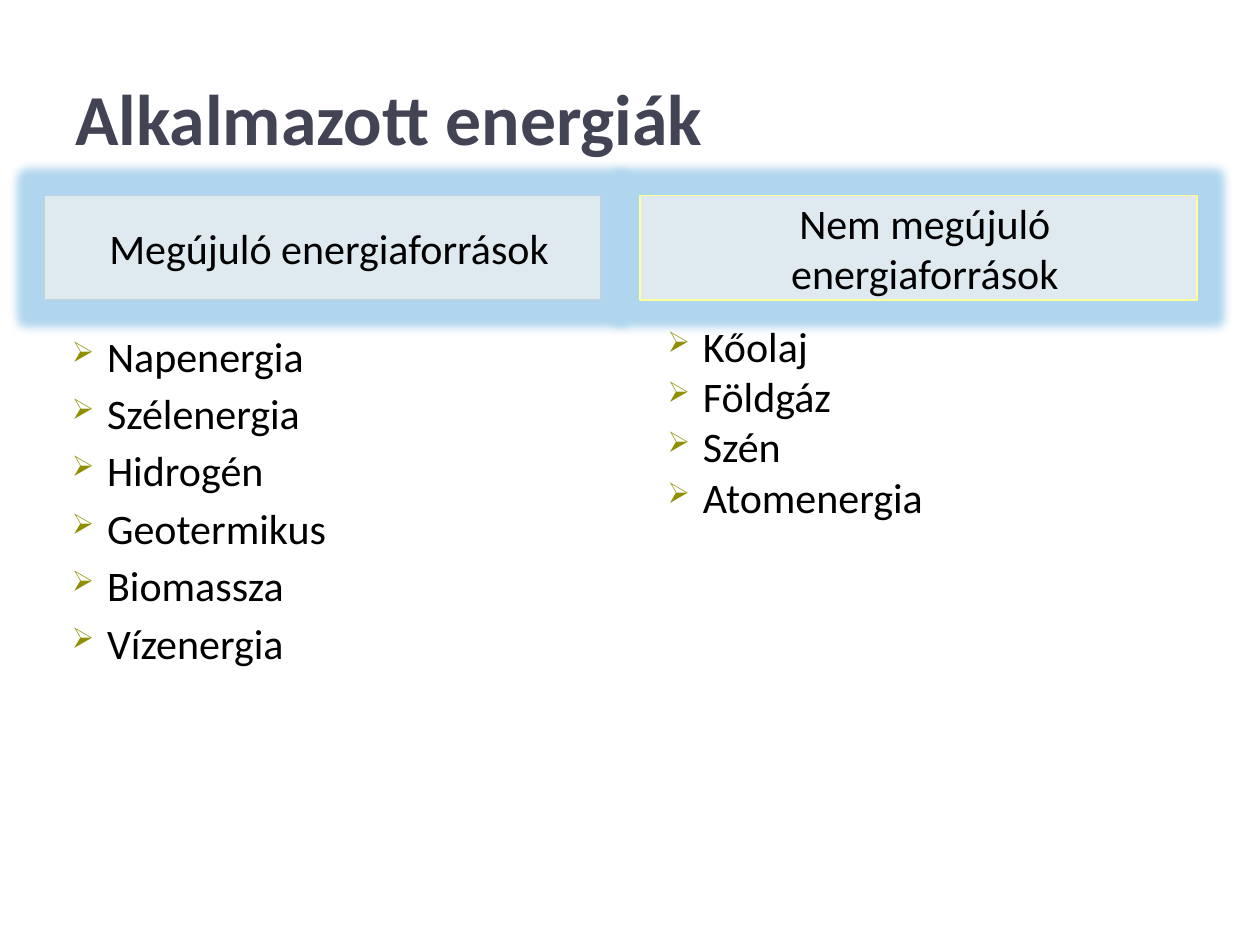
import pptx
import pptx.dml.color
import pptx.enum.shapes
import pptx.enum.text
import pptx.oxml.ns
import pptx.util
from lxml import etree
from pptx.util import Cm

ALIGN = pptx.enum.text.PP_ALIGN
MIDDLE = pptx.enum.text.MSO_ANCHOR.MIDDLE


def color(value):
    return pptx.dml.color.RGBColor.from_string(value)


def add_element(parent, tag, **attributes):
    return etree.SubElement(parent, pptx.oxml.ns.qn(tag), attributes)


def add_bullet(paragraph):
    properties = paragraph._p.get_or_add_pPr()
    properties.set("marL", str(Cm(1.02)))
    properties.set("indent", str(Cm(-0.71)))
    bullet_color = add_element(properties, "a:buClr")
    add_element(bullet_color, "a:srgbClr", val="8F8F00")
    add_element(properties, "a:buSzPct", val="68000")
    add_element(properties, "a:buChar", char="➢")


def write_text(frame, lines, size=24, text_color="000000", bold=False,
               align=ALIGN.LEFT, gap=0, bulleted=False):
    frame.word_wrap = True
    for index, line in enumerate(lines):
        paragraph = frame.add_paragraph() if index else frame.paragraphs[0]
        if bulleted:
            add_bullet(paragraph)
        paragraph.alignment = align
        paragraph.space_before = pptx.util.Pt(gap if index else 0)
        run = paragraph.add_run()
        run.text = line
        run.font.name = "Calibri"
        run.font.size = pptx.util.Pt(size)
        run.font.bold = bold
        run.font.color.rgb = color(text_color)


def add_glow(shape, glow_color, radius):
    shape.shadow.inherit = False
    effects = shape._element.spPr.find(pptx.oxml.ns.qn("a:effectLst"))
    glow = add_element(effects, "a:glow", rad=str(pptx.util.Pt(radius)))
    add_element(glow, "a:srgbClr", val=glow_color)


def add_title(slide, left, top, width, height, text):
    title = slide.shapes.add_textbox(left, top, width, height)
    title.text_frame.vertical_anchor = MIDDLE
    write_text(title.text_frame, [text], size=41, text_color="424456", bold=True)


def add_heading(slide, left, top, width, height, text, line_color):
    heading = slide.shapes.add_shape(
        pptx.enum.shapes.MSO_SHAPE.RECTANGLE, left, top, width, height)
    heading.fill.solid()
    heading.fill.fore_color.rgb = color("DEE9F0")
    heading.line.color.rgb = color(line_color)
    heading.line.width = pptx.util.Pt(0.75)
    add_glow(heading, "B0D6EF", 10)
    frame = heading.text_frame
    frame.margin_left = Cm(0.51)
    frame.vertical_anchor = MIDDLE
    write_text(frame, [text], align=ALIGN.CENTER)


def add_energy_column(slide, left, top, width, heading, items, line_color,
                      list_offset, gap):
    add_heading(slide, left, top, width, Cm(2.11), heading, line_color)
    energy_list = slide.shapes.add_textbox(
        left, top + list_offset, width, Cm(10.95))
    write_text(energy_list.text_frame, items, gap=gap, bulleted=True)


def main():
    presentation = pptx.Presentation()
    presentation.slide_width = Cm(25.4)
    presentation.slide_height = Cm(19.05)
    slide = presentation.slides.add_slide(presentation.slide_layouts[6])

    add_title(slide, Cm(1.27), Cm(0.76), Cm(22.86), Cm(3.18),
              "Alkalmazott energiák")
    columns = [
        ("Megújuló energiaforrások",
         ["Napenergia", "Szélenergia", "Hidrogén", "Geotermikus",
          "Biomassza", "Vízenergia"],
         "BED3E1", Cm(2.59), 4),
        ("Nem megújuló energiaforrások",
         ["Kőolaj", "Földgáz", "Szén", "Atomenergia"],
         "FFFF99", Cm(2.39), 0),
    ]
    for index, column in enumerate(columns):
        add_energy_column(slide, Cm(0.89 + 12.01 * index), Cm(3.94),
                          Cm(11.23), *column)

    presentation.save("out.pptx")


if __name__ == "__main__":
    main()
